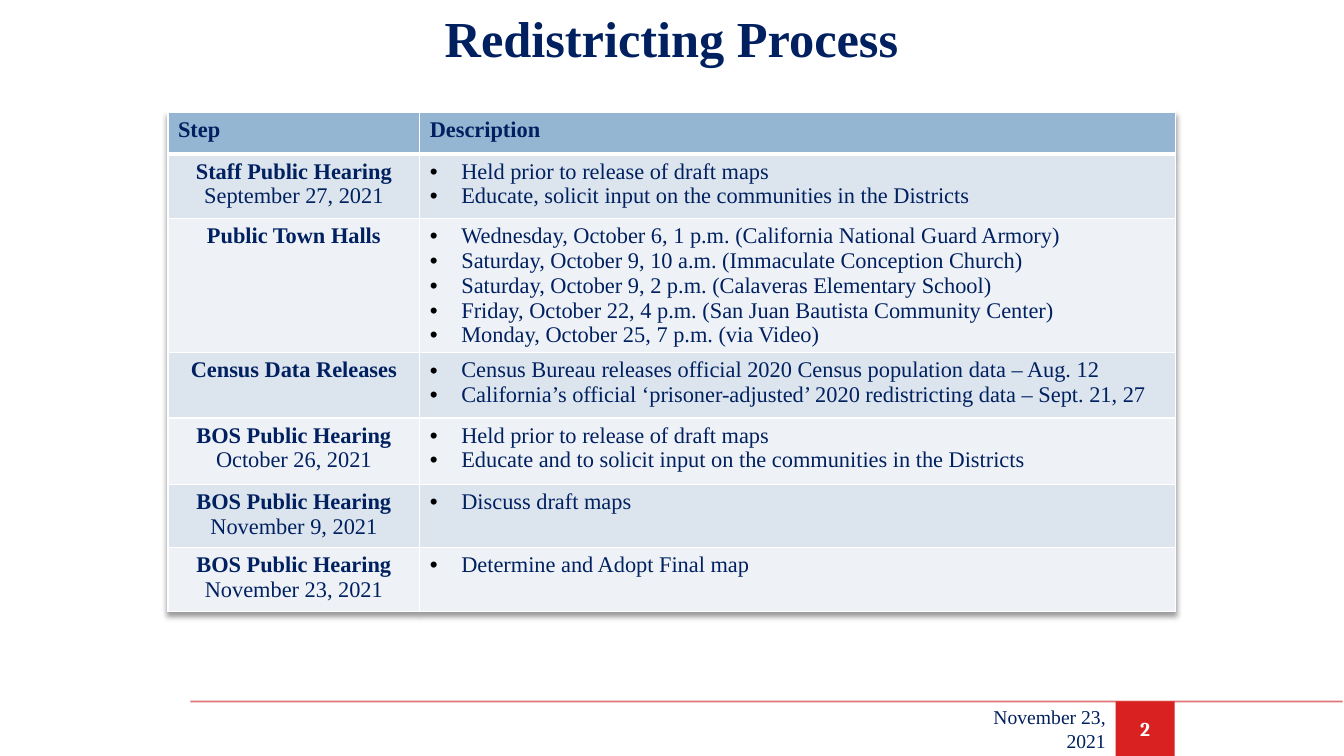
from dataclasses import dataclass

from lxml import etree
from pptx import Presentation
from pptx.dml.color import RGBColor
from pptx.enum import shapes, text
from pptx.oxml import ns
from pptx.util import Pt


@dataclass(frozen=True)
class Theme:
    navy: str = "002060"
    white: str = "FFFFFF"
    bullet: str = "000000"
    red: str = "D92121"
    rule: str = "C80000"
    header: str = "94B6D2"
    bands: tuple = ("DCE5EE", "EEF2F7")
    serif: str = "Times New Roman"
    number_font: str = "Cambria"
    title_size: int = 36
    body_size: int = 16
    footer_size: int = 14


THEME = Theme()
ALIGN = text.PP_ALIGN

STEPS = [
    (("Staff Public Hearing", "September 27, 2021"),
     ("Held prior to release of draft maps",
      "Educate, solicit input on the communities in the Districts")),
    (("Public Town Halls",),
     ("Wednesday, October 6, 1 p.m. (California National Guard Armory)",
      "Saturday, October 9, 10 a.m. (Immaculate Conception Church)",
      "Saturday, October 9, 2 p.m. (Calaveras Elementary School)",
      "Friday, October 22, 4 p.m. (San Juan Bautista Community Center)",
      "Monday, October 25, 7 p.m. (via Video)")),
    (("Census Data Releases",),
     ("Census Bureau releases official 2020 Census population data – Aug. 12",
      "California’s official ‘prisoner-adjusted’ 2020 redistricting data – Sept. 21, 27")),
    (("BOS Public Hearing", "October 26, 2021"),
     ("Held prior to release of draft maps",
      "Educate and to solicit input on the communities in the Districts")),
    (("BOS Public Hearing", "November 9, 2021"), ("Discuss draft maps",)),
    (("BOS Public Hearing", "November 23, 2021"), ("Determine and Adopt Final map",)),
]
ROW_HEIGHTS = (30, 46, 96, 46.5, 47.5, 45, 45.5)


def rgb(color):
    return RGBColor.from_string(color)


def add_xml(parent, tag, **attributes):
    return etree.SubElement(parent, ns.qn(tag), attributes)


def add_color(parent, color, alpha=None):
    node = add_xml(parent, "a:srgbClr", val=color)
    if alpha is not None:
        add_xml(node, "a:alpha", val=str(alpha * 1000))


def add_run(paragraph, words, size, color=THEME.navy, bold=False, font=THEME.serif):
    run = paragraph.add_run()
    run.text = words
    run.font.size, run.font.bold, run.font.name = Pt(size), bold, font
    run.font.color.rgb = rgb(color)


def set_frame(frame):
    """Wrap and centre vertically, with fixed insets and no autofit."""
    frame.word_wrap = True
    frame.auto_size = text.MSO_AUTO_SIZE.NONE
    frame.vertical_anchor = text.MSO_ANCHOR.MIDDLE
    frame.margin_left = frame.margin_right = Pt(7.2)
    frame.margin_top = frame.margin_bottom = Pt(3.6)
    return frame.paragraphs[0]


def place_title(slide, left, top, width, height):
    title = slide.shapes.title
    title.left, title.top, title.width, title.height = map(Pt, (left, top, width, height))
    paragraph = set_frame(title.text_frame)
    paragraph.alignment = ALIGN.CENTER
    add_run(paragraph, "Redistricting Process", THEME.title_size, bold=True)


def add_bullet(paragraph):
    properties = paragraph._p.get_or_add_pPr()
    indent = Pt(22.5)
    properties.set("marL", str(indent))
    properties.set("indent", str(-indent))
    add_color(add_xml(properties, "a:buClr"), THEME.bullet)
    add_xml(properties, "a:buFont", typeface="Arial")
    add_xml(properties, "a:buChar", char="•")


def format_cell(cell, row, fill):
    """Draw white borders, thicker under the header, then fill the cell."""
    properties = cell._tc.get_or_add_tcPr()
    for side in "LRTB":
        under_header = (row, side) in ((0, "B"), (1, "T"))
        border = add_xml(properties, f"a:ln{side}", w=str(Pt(3 if under_header else 1)))
        add_color(add_xml(border, "a:solidFill"), THEME.white)
    cell.fill.solid()
    cell.fill.fore_color.rgb = rgb(fill)


def fill_cell(cell, lines, bold_first=False, alignment=ALIGN.LEFT, bulleted=False):
    frame = cell.text_frame
    for index, line in enumerate(lines):
        paragraph = frame.add_paragraph() if index else frame.paragraphs[0]
        paragraph.alignment = alignment
        if bulleted:
            add_bullet(paragraph)
        add_run(paragraph, line, THEME.body_size, bold=bold_first and index == 0)


def add_table_shadow(table):
    effects = add_xml(table._tbl.tblPr, "a:effectLst")
    table._tbl.tblPr.insert(0, effects)
    shadow = add_xml(effects, "a:outerShdw", blurRad=str(Pt(4)), dist=str(Pt(3)),
                     dir="5400000", algn="t", rotWithShape="0")
    add_color(shadow, "000000", 40)


def add_steps_table(slide, left, top, width):
    table = slide.shapes.add_table(len(ROW_HEIGHTS), 2, Pt(left), Pt(top),
                                   Pt(width), Pt(sum(ROW_HEIGHTS))).table
    step_width = width / 4
    table.columns[0].width, table.columns[1].width = Pt(step_width), Pt(width - step_width)
    for row, height in enumerate(ROW_HEIGHTS):
        table.rows[row].height = Pt(height)
        fill = THEME.bands[(row - 1) % 2] if row else THEME.header
        for column in range(2):
            format_cell(table.cell(row, column), row, fill)
    for column, heading in enumerate(("Step", "Description")):
        fill_cell(table.cell(0, column), [heading], bold_first=True)
    for row, (step, description) in enumerate(STEPS, 1):
        fill_cell(table.cell(row, 0), step, bold_first=True, alignment=ALIGN.CENTER)
        fill_cell(table.cell(row, 1), description, bulleted=True)
    add_table_shadow(table)


def add_footer(slide, left, top, right, height):
    """Place the rule along the top, with the date and page number below it."""
    rule = slide.shapes.add_connector(shapes.MSO_CONNECTOR.STRAIGHT,
                                      Pt(left), Pt(top), Pt(right), Pt(top))
    rule.line.width = Pt(1.25)
    rule.line.color.rgb = rgb(THEME.rule)
    rule_color = rule.line._ln.find(".//" + ns.qn("a:srgbClr"))
    add_xml(rule_color, "a:alpha", val="55000")
    add_xml(rule._element.spPr, "a:effectLst")

    number_width, date_width = 42, 125
    number_left = right - 162
    number = slide.shapes.add_shape(shapes.MSO_SHAPE.RECTANGLE, Pt(number_left), Pt(top),
                                    Pt(number_width), Pt(height))
    number.shadow.inherit = False
    number.fill.solid()
    number.fill.fore_color.rgb = rgb(THEME.red)
    number.line.fill.background()
    paragraph = set_frame(number.text_frame)
    paragraph.alignment = ALIGN.CENTER
    add_run(paragraph, "2", THEME.footer_size, THEME.white, True, THEME.number_font)

    date = slide.shapes.add_textbox(Pt(number_left - date_width), Pt(top),
                                    Pt(date_width), Pt(height))
    paragraph = set_frame(date.text_frame)
    paragraph.alignment = ALIGN.RIGHT
    add_run(paragraph, "November 23, 2021", THEME.footer_size)


def main():
    deck = Presentation()
    deck.slide_width, deck.slide_height = Pt(960), Pt(540)
    slide = deck.slides.add_slide(deck.slide_layouts.get_by_name("Title Only"))
    place_title(slide, 120, -12, 719.5, 78)
    add_steps_table(slide, 120, 80, 719.5)
    add_footer(slide, 136, 501, 959, 39)
    deck.save("out.pptx")


if __name__ == "__main__":
    main()
